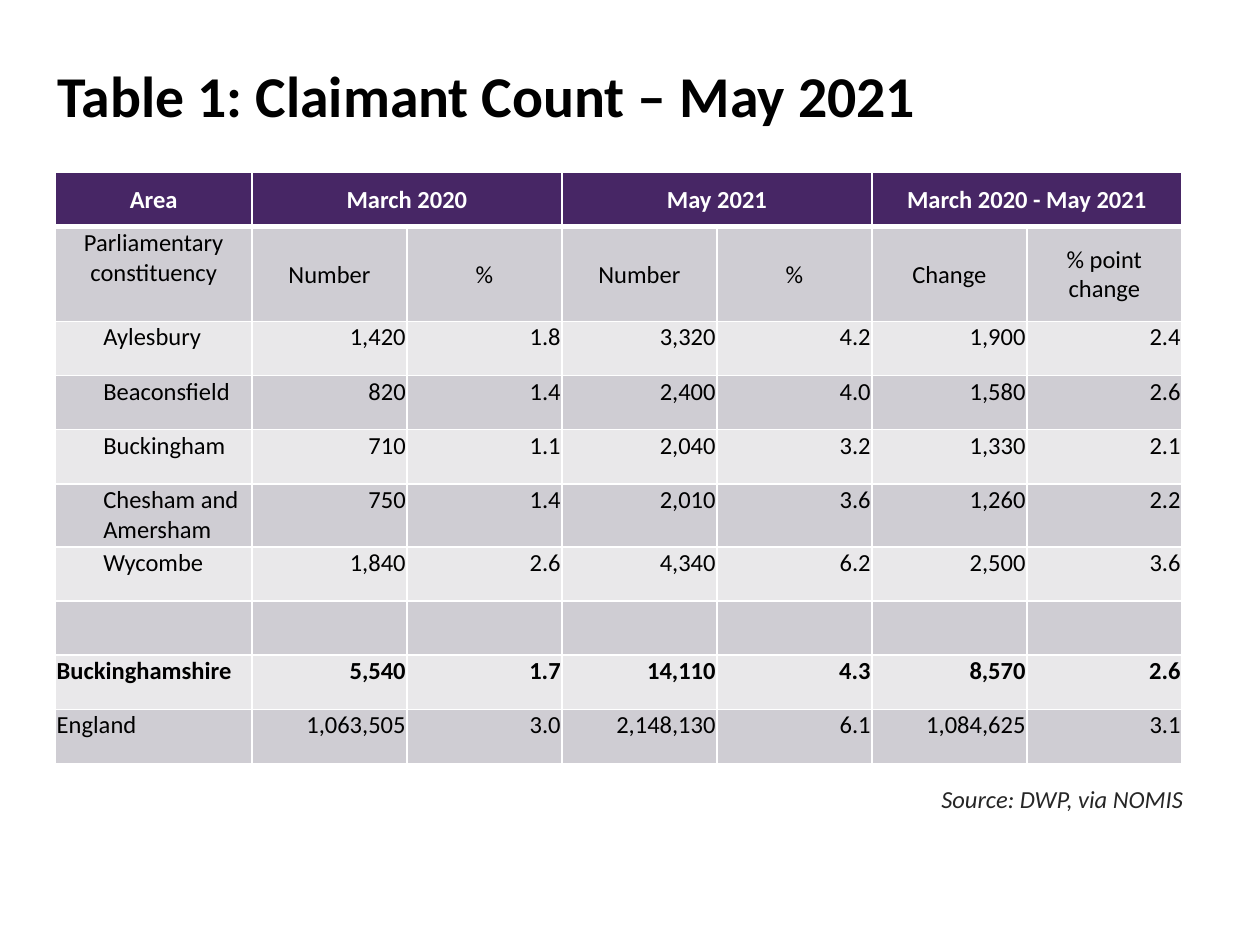
"""Build the claimant count table slide."""
from lxml.etree import SubElement
from pptx import Presentation
from pptx.dml.color import RGBColor
from pptx.enum.text import MSO_ANCHOR, PP_ALIGN
from pptx.oxml.ns import qn
from pptx.util import Inches, Pt

FONT = "Calibri"
COLORS = {"header": "472665", "dark_band": "CFCDD3", "light_band": "E9E8EA",
          "white": "FFFFFF", "black": "000000", "source": "262626"}
TITLE = "Table 1: Claimant Count – May 2021"
SOURCE = "Source: DWP, via NOMIS"
PERIODS = ["Area", "March 2020", "", "May 2021", "", "March 2020 - May 2021", ""]
MEASURES = ["Parliamentary constituency", "Number", "%", "Number", "%",
            "Change", "% point change"]
CONSTITUENCIES = [
    ["Aylesbury", "1,420", "1.8", "3,320", "4.2", "1,900", "2.4"],
    ["Beaconsfield", "820", "1.4", "2,400", "4.0", "1,580", "2.6"],
    ["Buckingham", "710", "1.1", "2,040", "3.2", "1,330", "2.1"],
    ["Chesham and Amersham", "750", "1.4", "2,010", "3.6", "1,260", "2.2"],
    ["Wycombe", "1,840", "2.6", "4,340", "6.2", "2,500", "3.6"],
]
COUNTY = ["Buckinghamshire", "5,540", "1.7", "14,110", "4.3", "8,570", "2.6"]
NATION = ["England", "1,063,505", "3.0", "2,148,130", "6.1", "1,084,625", "3.1"]
ROWS = [PERIODS, MEASURES, *CONSTITUENCIES, [""] * 7, COUNTY, NATION]
COLUMN_WIDTHS = [1.56] + [1.23] * 6
ROW_HEIGHTS = [0.43, 0.75] + [0.43] * 3 + [0.5] + [0.43] * 4


def color(name):
    return RGBColor.from_string(COLORS[name])


def style_font(font, size, color_name, bold=False, italic=False):
    font.name, font.size, font.bold, font.italic = FONT, Pt(size), bold, italic
    font.color.rgb = color(color_name)


def add_text(slide, text, box, size, color_name, align, anchor, **style):
    shape = slide.shapes.add_textbox(*map(Inches, box))
    frame = shape.text_frame
    frame.word_wrap = True
    frame.vertical_anchor = anchor
    paragraph = frame.paragraphs[0]
    paragraph.alignment = align
    run = paragraph.add_run()
    run.text = text
    style_font(run.font, size, color_name, **style)


def add_borders(cell, row):
    properties = cell._tc.get_or_add_tcPr()
    widths = {"lnL": 1, "lnR": 1, "lnT": 3 if row == 1 else 1,
              "lnB": 3 if row == 0 else 1}
    for side, width in widths.items():
        line = SubElement(properties, qn(f"a:{side}"), w=str(Pt(width)))
        fill = SubElement(line, qn("a:solidFill"))
        SubElement(fill, qn("a:srgbClr"), val=COLORS["white"])


def fill_cell(cell, row, column):
    values = ROWS[row]
    heading = row < 2
    add_borders(cell, row)
    cell.fill.solid()
    band = "dark_band" if row % 2 else "light_band"
    cell.fill.fore_color.rgb = color("header" if row == 0 else band)
    cell.margin_left = cell.margin_right = cell.margin_top = Inches(0.01)
    cell.margin_bottom = 0
    centred = row == 0 or (row == 1 and column > 0)
    cell.vertical_anchor = MSO_ANCHOR.MIDDLE if centred else MSO_ANCHOR.TOP
    paragraph = cell.text_frame.paragraphs[0]
    if heading:
        paragraph.alignment = PP_ALIGN.CENTER
    else:
        paragraph.alignment = PP_ALIGN.RIGHT if column else PP_ALIGN.LEFT
    if column == 0 and values in CONSTITUENCIES:
        paragraph._p.get_or_add_pPr().set("marL", str(Inches(0.37)))
    style = (14, "white" if row == 0 else "black", row == 0 or values is COUNTY)
    if values[column]:
        run = paragraph.add_run()
        run.text = values[column]
        style_font(run.font, *style)
    else:
        style_font(paragraph.font, *style)


def add_claimant_table(slide):
    table = slide.shapes.add_table(
        len(ROWS), len(COLUMN_WIDTHS), Inches(0.44), Inches(1.37),
        Inches(sum(COLUMN_WIDTHS)), Inches(sum(ROW_HEIGHTS))).table
    for column, width in zip(table.columns, COLUMN_WIDTHS):
        column.width = Inches(width)
    for row, height in zip(table.rows, ROW_HEIGHTS):
        row.height = Inches(height)
    for row in range(len(ROWS)):
        for column in range(len(COLUMN_WIDTHS)):
            fill_cell(table.cell(row, column), row, column)
    for column in (1, 3, 5):
        table.cell(0, column).merge(table.cell(0, column + 1))


def main():
    presentation = Presentation()
    presentation.slide_width, presentation.slide_height = Inches(10), Inches(7.5)
    slide = presentation.slides.add_slide(presentation.slide_layouts[6])
    add_text(slide, TITLE, (0.36, 0.24, 8.62, 1.02), 33, "black",
             PP_ALIGN.LEFT, MSO_ANCHOR.MIDDLE, bold=True)
    add_claimant_table(slide)
    add_text(slide, SOURCE, (7.11, 6.17, 2.38, 0.34), 14, "source",
             PP_ALIGN.RIGHT, MSO_ANCHOR.TOP, italic=True)
    presentation.save("out.pptx")


if __name__ == "__main__":
    main()
